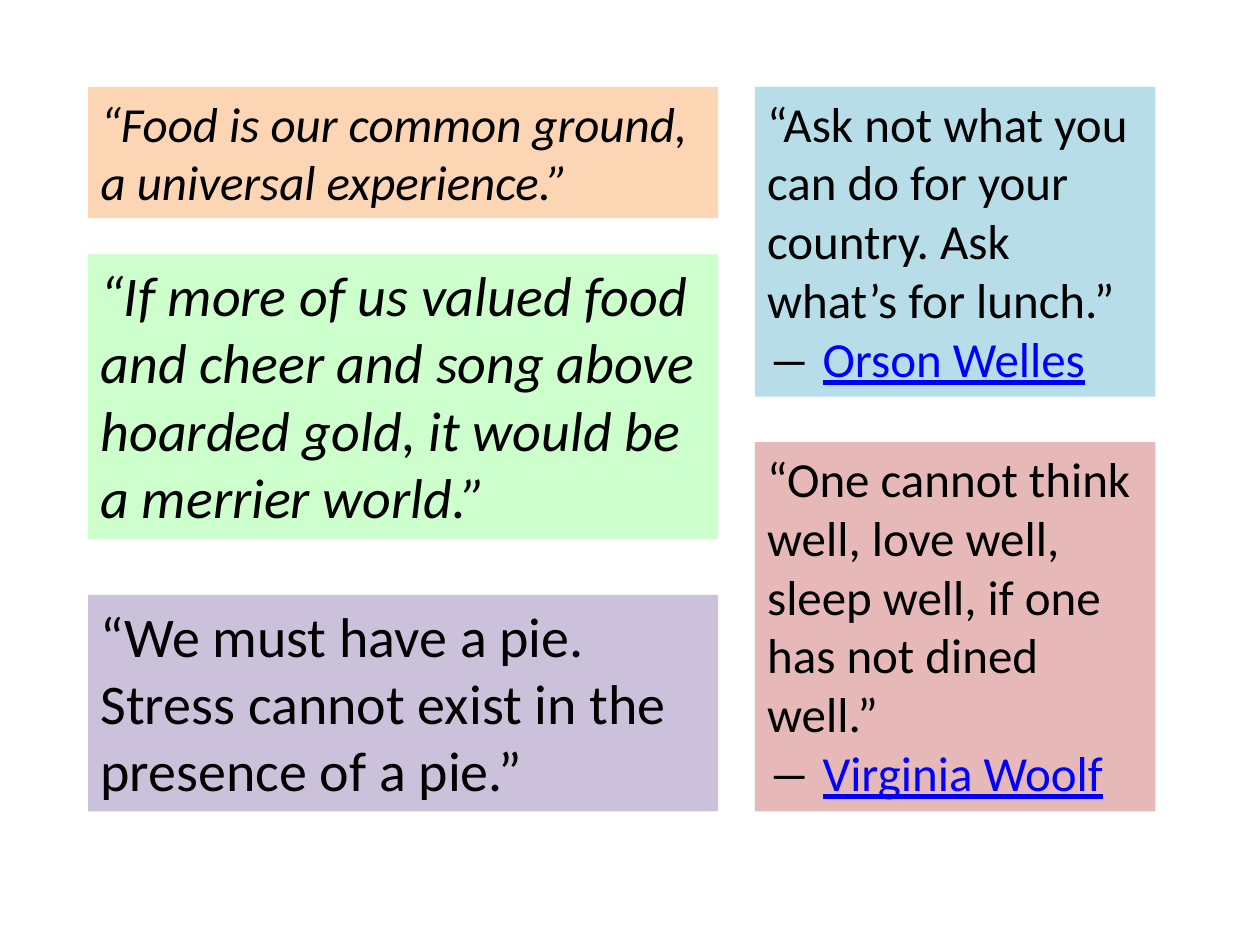
from pptx import Presentation
from pptx.dml.color import RGBColor
from pptx.enum.text import MSO_AUTO_SIZE
from pptx.util import Pt

LEFT_COLUMN = (50.4, 360)
RIGHT_COLUMN = (431.3, 229)
TOP = 49.7

QUOTES = [
    (LEFT_COLUMN, TOP, 75, "FCD5B5", 28, True,
     "“Food is our common ground, a universal experience.”", None),
    (LEFT_COLUMN, 145.4, 162.7, "CCFFCC", 32, True,
     "“If more of us valued food and cheer and song above hoarded gold, "
     "it would be a merrier world.”", None),
    (RIGHT_COLUMN, TOP, 177, "B7DEE8", 28, False,
     "“Ask not what you can do for your country. Ask what’s for lunch.”",
     "Orson Welles"),
    (RIGHT_COLUMN, 252.7, 211, "E6B9B8", 28, False,
     "“One cannot think well, love well, sleep well, if one has not dined well.”",
     "Virginia Woolf"),
    (LEFT_COLUMN, 339.9, 123.8, "CCC1DA", 32, False,
     "“We must have a pie. Stress cannot exist in the presence of a pie.”", None),
]


def color(hex_code):
    """Turn a hex string into a colour."""
    return RGBColor.from_string(hex_code)


def style_paragraph(paragraph, size, italic):
    """Set the shared quote font on a paragraph."""
    font = paragraph.font
    font.name = "Calibri"
    font.size = Pt(size)
    font.italic = italic
    font.color.rgb = color("000000")


def add_quote(slide, column, top, height, fill, size, italic, quote, author):
    """Place one filled quote box, with its author line if there is one."""
    left, width = column
    card = slide.shapes.add_textbox(Pt(left), Pt(top), Pt(width), Pt(height))
    card.fill.solid()
    card.fill.fore_color.rgb = color(fill)
    frame = card.text_frame
    frame.word_wrap = True
    frame.auto_size = MSO_AUTO_SIZE.SHAPE_TO_FIT_TEXT
    quotation = frame.paragraphs[0]
    quotation.add_run().text = quote
    style_paragraph(quotation, size, italic)
    if author:
        attribution = frame.add_paragraph()
        style_paragraph(attribution, size, italic)
        attribution.add_run().text = "― "
        author_name = attribution.add_run()
        author_name.text = author
        author_name.font.underline = True
        author_name.font.color.rgb = color("0000FF")


def main():
    """Build the slide of food quotes and save it."""
    presentation = Presentation()
    presentation.slide_width = Pt(720)
    presentation.slide_height = Pt(540)
    slide = presentation.slides.add_slide(presentation.slide_layouts[6])
    for quote in QUOTES:
        add_quote(slide, *quote)
    presentation.save("out.pptx")


if __name__ == "__main__":
    main()
